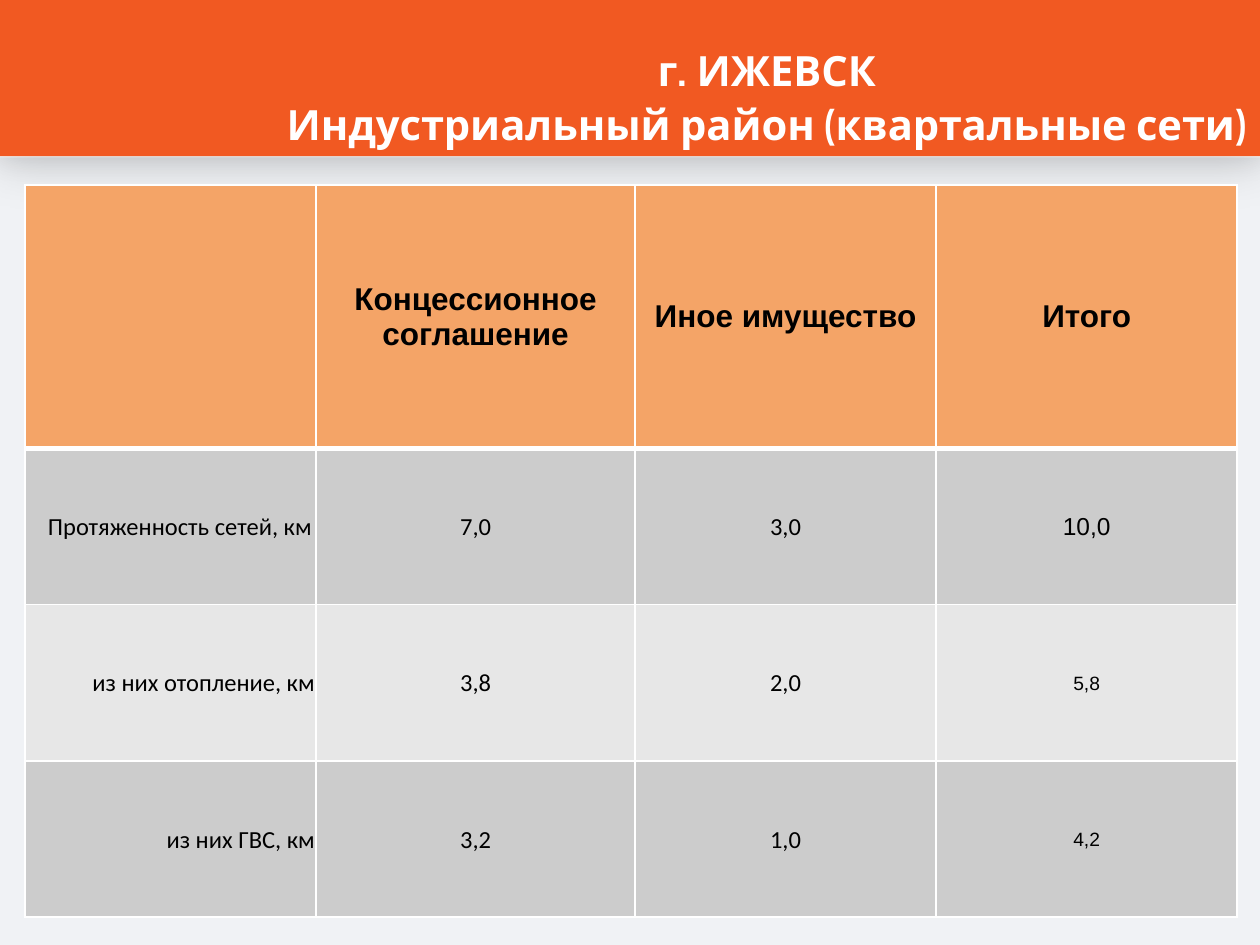
from dataclasses import dataclass

import pptx
import pptx.dml.color
import pptx.enum.shapes
import pptx.enum.text
import pptx.oxml
import pptx.oxml.ns
import pptx.util

Inches = pptx.util.Inches
Pt = pptx.util.Pt
Align = pptx.enum.text.PP_ALIGN
Middle = pptx.enum.text.MSO_ANCHOR.MIDDLE

HUES = {
    "page": "F0F2F5", "white": "FFFFFF", "banner": "F15922", "black": "000000",
    "head": "F4A467", "dark": "CCCCCC", "light": "E7E7E7",
}


@dataclass
class Band:
    top: float
    high: float
    hue: str
    shade: tuple = ()  # opacity in percent, blur and distance in points


@dataclass
class Row:
    label: str
    cells: tuple
    hue: str
    total: int  # text size of the last column
    align: object = Align.RIGHT
    indent: float = 0.01


BANDS = [
    Band(0, 7.5, "page"),
    Band(-0.01, 1.26, "white", (8, 15, 1)),
    Band(-0.02, 1.26, "banner", (17, 29, 3)),
]
HEADS = ("", "Концессионное соглашение", "Иное имущество", "Итого")
ROWS = [
    Row("Протяженность сетей, км", ("7,0", "3,0", "10,0"), "dark", 14, Align.LEFT, 0.18),
    Row("из них отопление, км", ("3,8", "2,0", "5,8"), "light", 11),
    Row("из них ГВС, км", ("3,2", "1,0", "4,2"), "dark", 11),
]
WIDTHS = (2.31, 2.53, 2.39, 2.39)
HEIGHTS = (2.09, 1.24, 1.24, 1.24)


def tint(name: str):
    return pptx.dml.color.RGBColor.from_string(HUES[name])


def add_xml(parent, text: str) -> None:
    space = pptx.oxml.ns.nsdecls("a")
    parent.append(pptx.oxml.parse_xml(text.replace(" ", f" {space} ", 1)))


def write(para, text: str, *, size: float, font: str = "Arial", hue: str = "black",
          bold: bool = False, align=Align.CENTER, before: float = 0) -> None:
    para.alignment = align
    if before:
        para.space_before = Pt(before)
    run = para.add_run()
    run.text = text
    run.font.size = Pt(size)
    run.font.name = font
    run.font.bold = bold
    run.font.color.rgb = tint(hue)


def draw_band(slide, band: Band) -> None:
    shape = slide.shapes.add_shape(
        pptx.enum.shapes.MSO_SHAPE.RECTANGLE,
        Inches(-0.01), Inches(band.top), Inches(10.02), Inches(band.high))
    shape.shadow.inherit = False
    shape.fill.solid()
    shape.fill.fore_color.rgb = tint(band.hue)
    shape.line.fill.background()
    if band.shade:
        alpha, blur, dist = band.shade
        effects = shape._element.spPr.find(pptx.oxml.ns.qn("a:effectLst"))
        add_xml(effects, f'<a:outerShdw blurRad="{Pt(blur)}" dist="{Pt(dist)}" '
                f'dir="5400000" rotWithShape="0"><a:srgbClr val="{HUES["black"]}">'
                f'<a:alpha val="{alpha * 1000}"/></a:srgbClr></a:outerShdw>')


def draw_title(slide) -> None:
    box = slide.shapes.add_textbox(Inches(2.17), 0, Inches(7.83), Inches(1.23))
    frame = box.text_frame
    frame.word_wrap = True
    frame.margin_left = frame.margin_right = frame.margin_bottom = 0
    frame.margin_top = Inches(0.36)
    style = dict(size=23.8, font="Cabin", hue="white", bold=True)
    write(frame.paragraphs[0], "г. ИЖЕВСК", **style)
    write(frame.add_paragraph(), "Индустриальный район (квартальные сети)",
          before=2, **style)


def style_cell(cell, hue: str, top: float = 1, base: float = 1) -> None:
    """Set the fill and the white borders; top and base are widths in points."""
    props = cell._tc.get_or_add_tcPr()
    for side, width in (("L", 1), ("R", 1), ("T", top), ("B", base)):
        add_xml(props, f'<a:ln{side} w="{Pt(width)}"><a:solidFill>'
                f'<a:srgbClr val="{HUES["white"]}"/></a:solidFill></a:ln{side}>')
    cell.fill.solid()
    cell.fill.fore_color.rgb = tint(hue)
    cell.vertical_anchor = Middle


def draw_table(slide) -> None:
    table = slide.shapes.add_table(
        len(HEIGHTS), len(WIDTHS), Inches(0.2), Inches(1.47),
        Inches(sum(WIDTHS)), Inches(sum(HEIGHTS))).table
    for col, width in zip(table.columns, WIDTHS):
        col.width = Inches(width)
    for line, height in zip(table.rows, HEIGHTS):
        line.height = Inches(height)

    for col, text in enumerate(HEADS):
        cell = table.cell(0, col)
        style_cell(cell, "head", base=3)
        if text:
            write(cell.text_frame.paragraphs[0], text, size=18, bold=True)

    for num, row in enumerate(ROWS, 1):
        for col, text in enumerate((row.label, *row.cells)):
            cell = table.cell(num, col)
            style_cell(cell, row.hue, top=3 if num == 1 else 1)
            first, last = col == 0, col == len(WIDTHS) - 1
            cell.margin_left = Inches(row.indent if first else 0.01)
            cell.margin_right = cell.margin_top = Inches(0.01)
            cell.margin_bottom = 0
            write(cell.text_frame.paragraphs[0], text,
                  size=row.total if last else 14,
                  font="Arial" if last else "Calibri",
                  align=row.align if first else Align.CENTER)


def main() -> None:
    deck = pptx.Presentation()
    deck.slide_width, deck.slide_height = Inches(10), Inches(7.5)
    slide = deck.slides.add_slide(deck.slide_layouts[6])
    for band in BANDS:
        draw_band(slide, band)
    draw_title(slide)
    draw_table(slide)
    deck.save("out.pptx")


if __name__ == "__main__":
    main()
